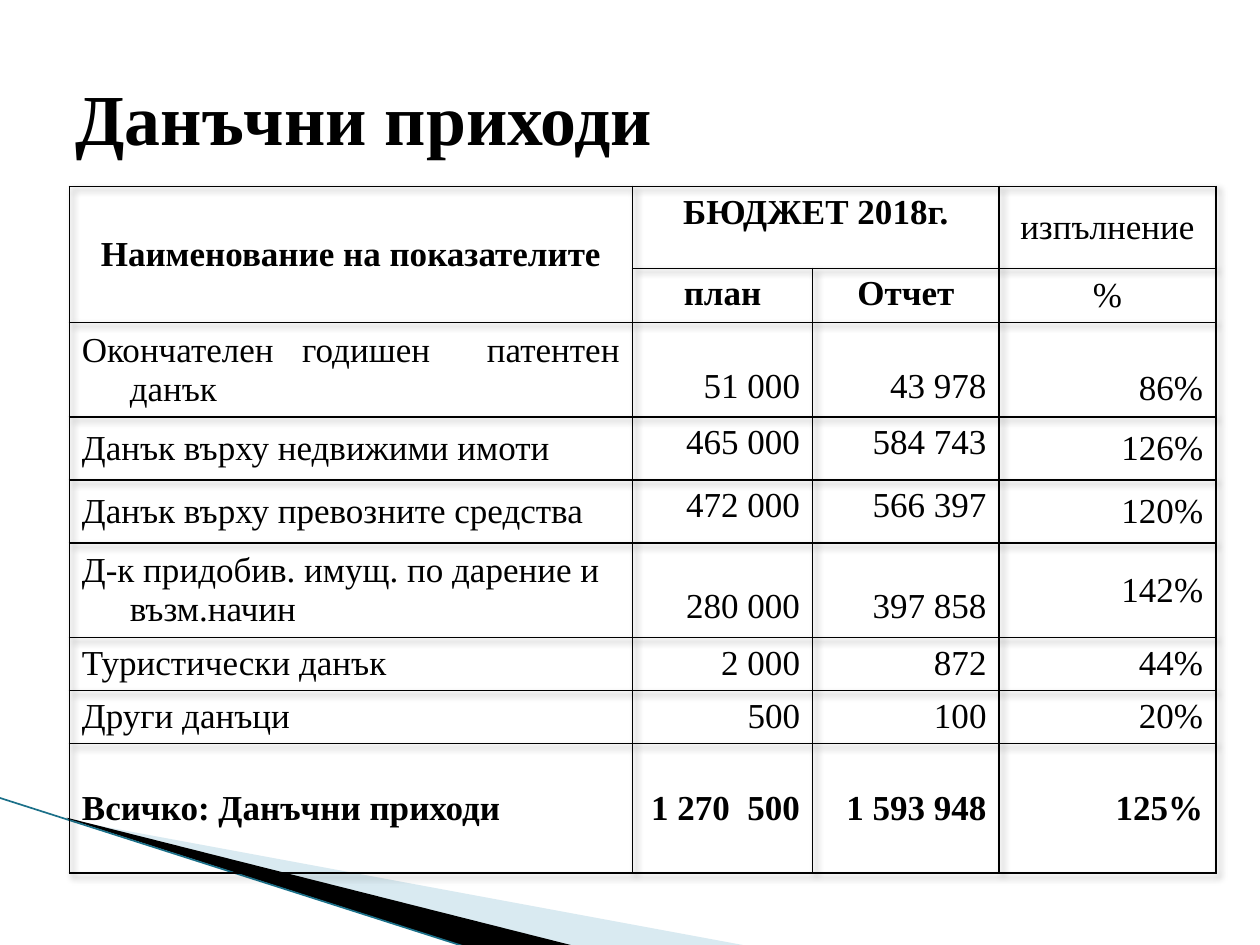
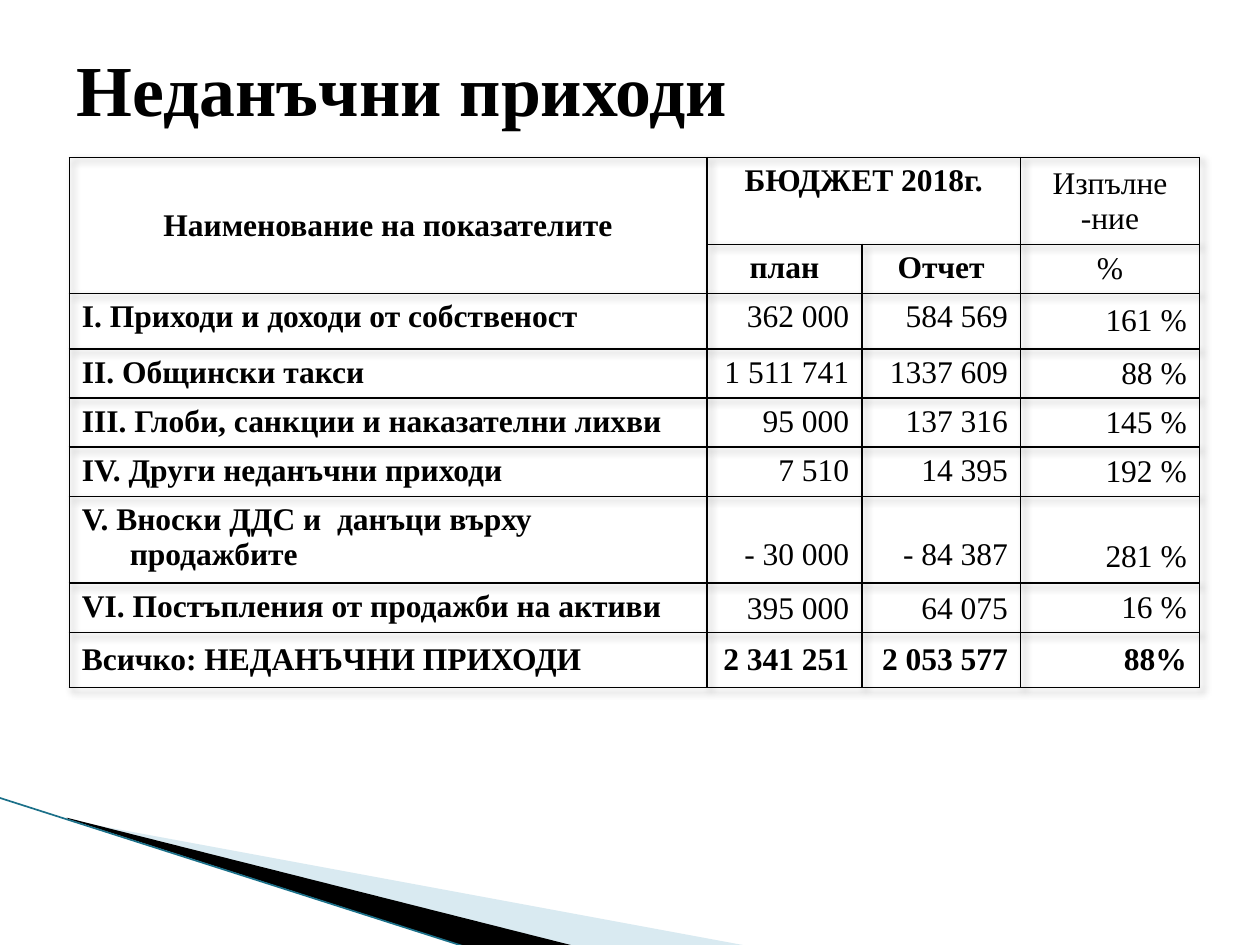
from dataclasses import dataclass

from lxml import etree
from pptx import Presentation
from pptx import util as u
from pptx.dml.color import RGBColor
from pptx.enum import shapes, text
from pptx.oxml import parse_xml
from pptx.oxml.ns import qn

BLACK = RGBColor(0x00, 0x00, 0x00)
PALE_BLUE = RGBColor(0xA0, 0xCB, 0xDC)
TEAL = RGBColor(0x1B, 0x70, 0x89)
FONT = "Times New Roman"
TITLE_SIZE = 41
HANGING = u.Inches(0.38)
TALL_ROW = 0.6
NAMESPACE = 'xmlns:a="http://schemas.openxmlformats.org/drawingml/2006/main"'
TOP, MIDDLE, BOTTOM = (
    text.MSO_ANCHOR.TOP, text.MSO_ANCHOR.MIDDLE, text.MSO_ANCHOR.BOTTOM)
LEFT, CENTER, RIGHT, JUSTIFY = (
    text.PP_ALIGN.LEFT, text.PP_ALIGN.CENTER, text.PP_ALIGN.RIGHT, text.PP_ALIGN.JUSTIFY)


@dataclass
class Row:
    """One indicator: its label, plan, report and percentage."""
    height: float
    label: str
    plan: str
    report: str
    percent: str
    number_anchor: object = TOP
    percent_anchor: object = MIDDLE
    label_align: object = JUSTIFY


@dataclass
class Revenue:
    """Contents and measures of one revenue slide."""
    title: str
    title_box: tuple
    table_box: tuple
    widths: tuple
    header_heights: tuple
    size: int
    execution: tuple
    rows: tuple
    label_bold: bool
    label_anchor: object


TAX = Revenue(
    "Данъчни приходи", (0.5, 0.3, 9, 1.25), (0.55, 1.48, 9.1, 5.45),
    (4.47, 1.43, 1.48, 1.72), (0.65, 0.43), 20, ("изпълнение",),
    (
        Row(0.75, "Окончателен годишен  патентен данък", "51 000", "43 978", "86%",
            BOTTOM, BOTTOM),
        Row(0.5, "Данък върху недвижими имоти", "465 000", "584 743", "126%"),
        Row(0.5, "Данък върху превозните средства", "472 000", "566 397", "120%"),
        Row(0.75, "Д-к придобив. имущ. по дарение и възм.начин", "280 000", "397 858",
            "142%", BOTTOM, MIDDLE, LEFT),
        Row(0.42, "Туристически данък", "2 000", "872", "44%"),
        Row(0.42, "Други данъци", "500", "100", "20%"),
        Row(1.03, "Всичко: Данъчни приходи", "1 270  500", "1 593 948", "125%", MIDDLE),
    ), False, MIDDLE)

NON_TAX = Revenue(
    "Неданъчни приходи", (0.51, 0.21, 9, 0.97), (0.55, 1.25, 8.97, 4.21),
    (5.06, 1.23, 1.26, 1.42), (0.69, 0.39), 18, ("Изпълне", "-ние"),
    (
        Row(0.44, "I. Приходи и доходи от собственост", "362 000", "584 569", "161 %"),
        Row(0.39, "II. Общински такси", "1 511 741", "1337 609", "88 %"),
        Row(0.39, "III. Глоби, санкции и наказателни лихви", "95 000", "137 316", "145 %"),
        Row(0.39, "IV. Други неданъчни приходи", "7 510", "14 395", "192 %"),
        Row(0.69, "V. Вноски ДДС и  данъци върху продажбите", "- 30 000", "- 84 387",
            "281 %", BOTTOM, BOTTOM, LEFT),
        Row(0.39, "VI. Постъпления от продажби на активи", "395 000", "64 075", "16 %",
            BOTTOM),
        Row(0.44, "Всичко: НЕДАНЪЧНИ ПРИХОДИ", "2 341 251", "2 053 577", "88%", MIDDLE,
            MIDDLE, LEFT),
    ), True, TOP)


def add_span(para, words, size, bold):
    """Add one formatted run."""
    span = para.add_run()
    span.text = words
    span.font.name = FONT
    span.font.size = u.Pt(size)
    span.font.bold = bold
    span.font.color.rgb = BLACK


def add_wedge(page, box, corners, color, opacity=100):
    """Draw a filled outline whose corners may reach beyond its box."""
    left, top, width, height = map(u.Inches, box)
    points = [(u.Inches(x), u.Inches(y)) for x, y in corners]
    builder = page.shapes.build_freeform(*points[0], scale=1.0)
    builder.add_line_segments(points[1:], close=True)
    wedge = builder.convert_to_shape()
    wedge.left, wedge.top, wedge.width, wedge.height = left, top, width, height
    outline = wedge._element.spPr.find(".//" + qn("a:path"))
    outline.set("w", str(width))
    outline.set("h", str(height))
    for corner, (x, y) in zip(outline.iter(qn("a:pt")), points):
        corner.set("x", str(x - left))
        corner.set("y", str(y - top))
    wedge.shadow.inherit = False
    wedge.line.fill.background()
    wedge.fill.solid()
    wedge.fill.fore_color.rgb = color
    if opacity < 100:
        tint = wedge._element.spPr.find(".//" + qn("a:srgbClr"))
        etree.SubElement(tint, qn("a:alpha")).set("val", str(opacity * 1000))


def add_corner_bands(page):
    """Draw the sloping bands in the lower left corner."""
    add_wedge(page, (0.78, 5.47, 4.16, 1.58),
              ((0.55, 6.51), (5.95, 7.51), (4.56, 7.51), (0.55, 6.5)), PALE_BLUE, 40)
    add_wedge(page, (-0.06, 6.33, 4.16, 0.92),
              ((0.53, 6.49), (4.57, 7.51), (3.72, 7.52), (0.54, 6.5)), BLACK)
    edge = page.shapes.add_connector(
        shapes.MSO_CONNECTOR.STRAIGHT,
        u.Inches(-0.01), u.Inches(6.33), u.Inches(3.71), u.Inches(7.52))
    edge.line.color.rgb = TEAL
    edge.line.width = u.Pt(0.95)
    etree.SubElement(edge._element.spPr, qn("a:effectLst"))


def add_title(page, words, box):
    """Place and format the title placeholder."""
    title = page.shapes.title
    title.left, title.top, title.width, title.height = map(u.Inches, box)
    frame = title.text_frame
    frame.vertical_anchor = MIDDLE
    frame.word_wrap = True
    frame.auto_size = text.MSO_AUTO_SIZE.NONE
    frame.paragraphs[0].alignment = LEFT
    add_span(frame.paragraphs[0], words, TITLE_SIZE, True)


def frame_cell(cell):
    """Give a cell thin black borders and no fill."""
    properties = cell._tc.get_or_add_tcPr()
    for side in ("lnL", "lnR", "lnT", "lnB"):
        properties.append(parse_xml(
            f'<a:{side} {NAMESPACE} w="{u.Pt(1)}"><a:solidFill>'
            f'<a:srgbClr val="{BLACK}"/></a:solidFill></a:{side}>'))
    cell.fill.background()


def fill_cell(cell, lines, size, bold, align, anchor):
    """Write lines with a hanging indent into a cell."""
    cell.vertical_anchor = anchor
    frame = cell.text_frame
    for index, words in enumerate(lines):
        para = frame.add_paragraph() if index else frame.paragraphs[0]
        para.alignment = align
        properties = para._p.get_or_add_pPr()
        properties.set("marL", str(HANGING))
        properties.set("indent", str(-HANGING))
        add_span(para, words, size, bold)


def add_header(table, revenue):
    """Fill the two merged header rows."""
    table.cell(0, 0).merge(table.cell(1, 0))
    table.cell(0, 1).merge(table.cell(0, 2))
    headings = (
        (0, 0, ("Наименование на показателите",), True, MIDDLE),
        (0, 1, ("БЮДЖЕТ 2018г.",), True, TOP),
        (0, 3, revenue.execution, False, MIDDLE),
        (1, 1, ("план",), True, TOP),
        (1, 2, ("Отчет",), True, TOP),
        (1, 3, ("%",), False, MIDDLE),
    )
    for line, column, lines, bold, anchor in headings:
        fill_cell(table.cell(line, column), lines, revenue.size, bold, CENTER, anchor)


def add_revenue_table(page, revenue):
    """Build the table of plan, report and percentage."""
    heights = revenue.header_heights + tuple(row.height for row in revenue.rows)
    holder = page.shapes.add_table(
        len(heights), len(revenue.widths), *map(u.Inches, revenue.table_box))
    table = holder.table
    table.first_row = table.horz_banding = False
    table._tbl.tblPr.insert(0, parse_xml(
        f'<a:effectLst {NAMESPACE}><a:outerShdw blurRad="50800" dist="38100" dir="2700000">'
        '<a:srgbClr val="000000"><a:alpha val="35000"/></a:srgbClr>'
        '</a:outerShdw></a:effectLst>'))
    for column, width in zip(table.columns, revenue.widths):
        column.width = u.Inches(width)
    for line, height in zip(table.rows, heights):
        line.height = u.Inches(height)
    for cell in table.iter_cells():
        frame_cell(cell)
    add_header(table, revenue)
    for index, row in enumerate(revenue.rows, len(revenue.header_heights)):
        total = row is revenue.rows[-1]
        entries = (
            (row.label, total or revenue.label_bold, row.label_align,
             MIDDLE if total else revenue.label_anchor),
            (row.plan, total, RIGHT, row.number_anchor),
            (row.report, total, RIGHT, row.number_anchor),
            (row.percent, total, RIGHT, row.percent_anchor),
        )
        for column, (words, bold, align, anchor) in enumerate(entries):
            cell = table.cell(index, column)
            fill_cell(cell, (words,), revenue.size, bold, align, anchor)
            if anchor == BOTTOM and row.height > TALL_ROW:
                cell.margin_bottom = u.Inches(0.07 if column == 3 else 0.09)


def add_revenue_slide(deck, revenue):
    """Add one slide with bands, title and table."""
    page = deck.slides.add_slide(deck.slide_layouts[5])
    add_corner_bands(page)
    add_title(page, revenue.title, revenue.title_box)
    add_revenue_table(page, revenue)


def main():
    """Build and save the deck."""
    deck = Presentation()
    deck.slide_width, deck.slide_height = u.Inches(10), u.Inches(7.5)
    for revenue in (TAX, NON_TAX):
        add_revenue_slide(deck, revenue)
    deck.save("out.pptx")


if __name__ == "__main__":
    main()
